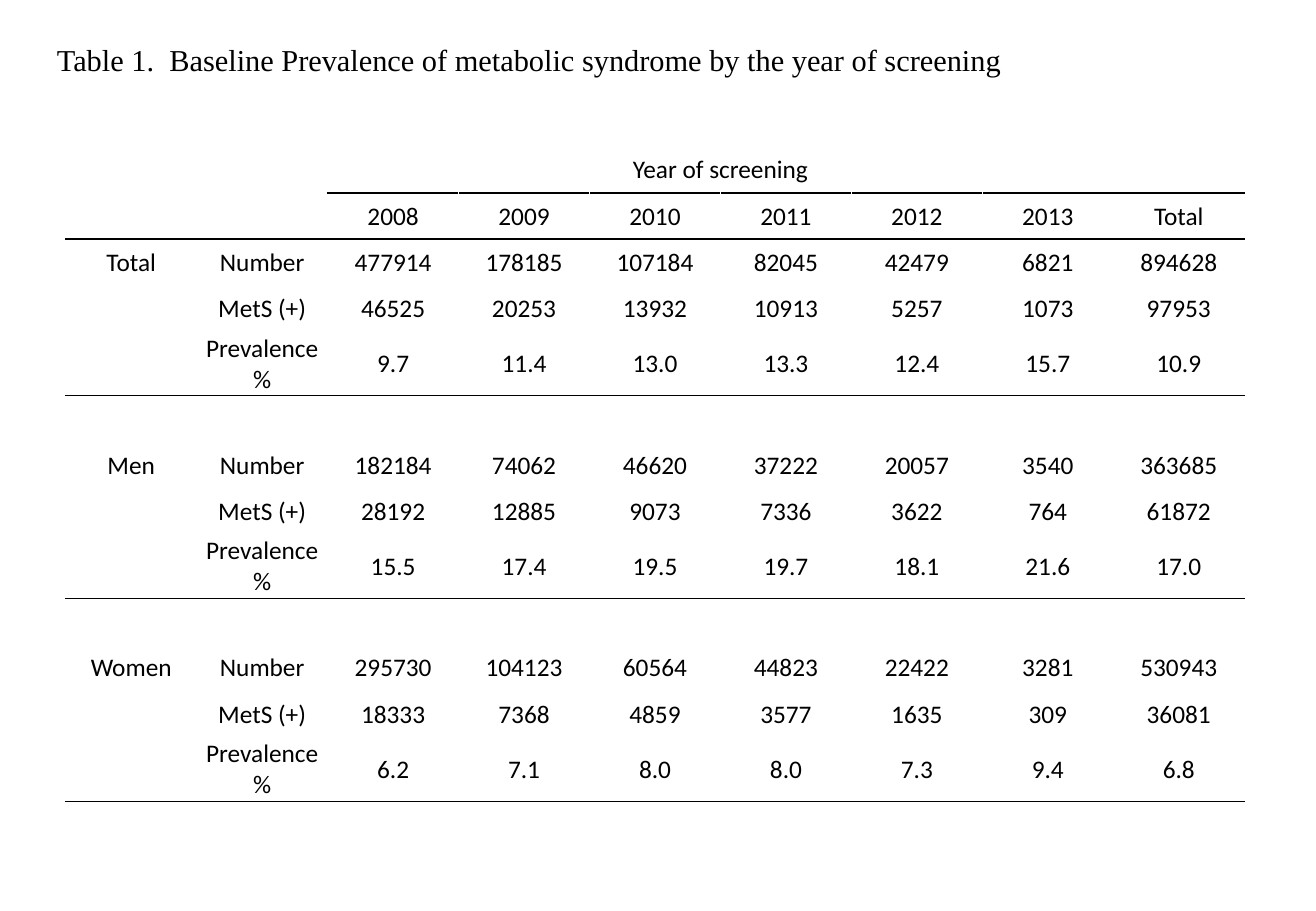
from dataclasses import dataclass

from lxml.etree import SubElement
from pptx import Presentation
from pptx.dml.color import RGBColor
from pptx.enum.text import MSO_ANCHOR as Anchor, MSO_AUTO_SIZE as AutoSize, PP_ALIGN as Align
from pptx.oxml.ns import qn
from pptx.util import Inches, Pt


@dataclass(frozen=True)
class Theme:
    ink: str = "000000"
    paper: str = "FFFFFF"
    title_font: str = "Times New Roman"
    table_font: str = "Calibri"
    title_size: int = 18
    table_size: int = 15
    rule_width: int = 1


THEME = Theme()
SLIDE_WIDTH, SLIDE_HEIGHT = Inches(10.83), Inches(7.5)
COLUMN_WIDTH = Inches(9.7) // 9
ROW_HEIGHT, TALL_ROW_HEIGHT = Inches(0.38), Inches(0.53)
FIRST_YEAR_COLUMN, LAST_YEAR_COLUMN = 2, 7

TITLE = "Table 1.  Baseline Prevalence of metabolic syndrome by the year of screening"
YEARS = ["2008", "2009", "2010", "2011", "2012", "2013", "Total"]
MEASURES = ["Number", "MetS (+)", "Prevalence\n%"]
GROUPS = {
    "Total": [
        "477914 178185 107184 82045 42479 6821 894628",
        "46525 20253 13932 10913 5257 1073 97953",
        "9.7 11.4 13.0 13.3 12.4 15.7 10.9",
    ],
    "Men": [
        "182184 74062 46620 37222 20057 3540 363685",
        "28192 12885 9073 7336 3622 764 61872",
        "15.5 17.4 19.5 19.7 18.1 21.6 17.0",
    ],
    "Women": [
        "295730 104123 60564 44823 22422 3281 530943",
        "18333 7368 4859 3577 1635 309 36081",
        "6.2 7.1 8.0 8.0 7.3 9.4 6.8",
    ],
}


def set_all(target, formats):
    for attribute, value in formats.items():
        setattr(target, attribute, value)


def format_text(frame, font_name, size, alignment):
    for paragraph in frame.paragraphs:
        paragraph.alignment = alignment
        set_all(paragraph.font, {"name": font_name, "size": Pt(size), "bold": False})
        for run in paragraph.runs:
            set_all(run.font, {"name": font_name, "size": Pt(size), "bold": False})
            run.font.color.rgb = RGBColor.from_string(THEME.ink)


def table_rows():
    """Return the rows of text and the indexes of the rows with a rule below."""
    rows = [["", "", "Year of screening"] + [""] * 6, ["", ""] + YEARS]
    ruled = {0, 1}
    for group, lines in GROUPS.items():
        if len(rows) > 2:
            rows.append([""] * 9)
        for index, (measure, line) in enumerate(zip(MEASURES, lines)):
            rows.append(["" if index else group, measure] + line.split())
        ruled.add(len(rows) - 1)
    return rows, ruled


def add_borders(cell, top, bottom):
    properties = cell._tc.get_or_add_tcPr()
    sides = {"L": THEME.paper, "R": THEME.paper, "T": top, "B": bottom}
    for side, colour in sides.items():
        border = SubElement(properties, qn(f"a:ln{side}"), w=str(Pt(THEME.rule_width)))
        SubElement(SubElement(border, qn("a:solidFill")), qn("a:srgbClr"), val=colour)


def fill_cell(cell, words, top, bottom):
    set_all(cell, {
        "text": words,
        "vertical_anchor": Anchor.MIDDLE,
        "margin_left": Inches(0.01),
        "margin_right": Inches(0.01),
        "margin_top": Inches(0.01),
        "margin_bottom": 0,
    })
    format_text(cell.text_frame, THEME.table_font, THEME.table_size, Align.CENTER)
    add_borders(cell, top, bottom)
    cell.fill.background()


def add_prevalence_table(slide):
    rows, ruled = table_rows()
    columns = len(rows[0])
    table = slide.shapes.add_table(
        len(rows), columns, int(SLIDE_WIDTH * 0.05), int(SLIDE_HEIGHT * 0.161),
        COLUMN_WIDTH * columns, ROW_HEIGHT * len(rows)).table
    set_all(table, {"first_row": False, "horz_banding": False})
    for column in table.columns:
        column.width = COLUMN_WIDTH

    def rule_below(row, column):
        under_blank_heading = row == 0 and column < FIRST_YEAR_COLUMN
        return THEME.ink if row in ruled and not under_blank_heading else THEME.paper

    for r, row in enumerate(rows):
        table.rows[r].height = TALL_ROW_HEIGHT if row[1] == MEASURES[-1] else ROW_HEIGHT
        for c, words in enumerate(row):
            fill_cell(table.cell(r, c), words, rule_below(r - 1, c), rule_below(r, c))
    table.cell(0, 0).merge(table.cell(0, FIRST_YEAR_COLUMN - 1))
    table.cell(0, FIRST_YEAR_COLUMN).merge(table.cell(0, LAST_YEAR_COLUMN))


def add_title(slide):
    title = slide.shapes.title
    set_all(title, {
        "left": int(SLIDE_WIDTH * 0.034),
        "top": int(SLIDE_HEIGHT * 0.039),
        "width": Inches(8),
        "height": Inches(0.4),
    })
    set_all(title.text_frame, {
        "text": TITLE,
        "word_wrap": False,
        "auto_size": AutoSize.SHAPE_TO_FIT_TEXT,
        "vertical_anchor": Anchor.TOP,
    })
    format_text(title.text_frame, THEME.title_font, THEME.title_size, Align.LEFT)


def main():
    deck = Presentation()
    set_all(deck, {"slide_width": SLIDE_WIDTH, "slide_height": SLIDE_HEIGHT})
    title_only = deck.slide_layouts[5]
    slide = deck.slides.add_slide(title_only)
    add_prevalence_table(slide)
    add_title(slide)
    deck.save("out.pptx")


if __name__ == "__main__":
    main()
